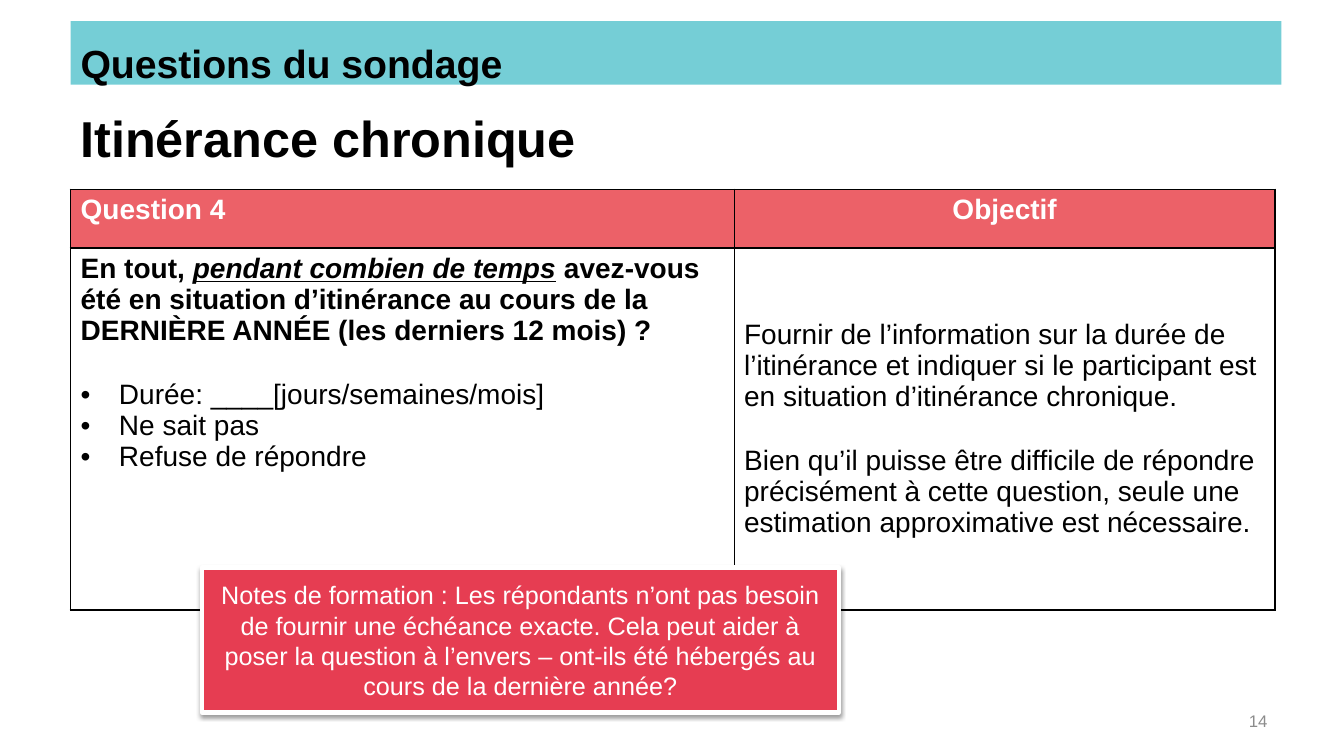
from dataclasses import dataclass, field

from lxml import etree
from pptx import Presentation
from pptx import util as u
from pptx.dml.color import RGBColor
from pptx.enum import shapes, text
from pptx.oxml import ns

ALIGN = text.PP_ALIGN
ANCHOR = text.MSO_ANCHOR
BLACK, WHITE, CORAL = "000000", "FFFFFF", "EC6168"


@dataclass
class Run:
    words: str
    marked: bool = False


@dataclass
class Para:
    runs: list[Run]
    size: float = 20
    color: str = BLACK
    bold: bool = False
    align: ALIGN = ALIGN.LEFT
    before: float = 0
    line: float = 0
    bullet: bool = False


@dataclass
class Box:
    left: float
    top: float
    width: float
    height: float
    para: Para
    anchor: ANCHOR = ANCHOR.MIDDLE
    fill: str = ""
    edge: str = ""


@dataclass
class Cell:
    paras: list[Para]
    fill: str = ""
    anchor: ANCHOR = ANCHOR.TOP


@dataclass
class Grid:
    left: float
    top: float
    cols: list[float]
    rows: list[float]
    cells: list[list[Cell]] = field(default_factory=list)


def rgb(code: str) -> RGBColor:
    return RGBColor.from_string(code)


def add_tag(parent, name: str, **attrs):
    return etree.SubElement(parent, ns.qn(name), {k: str(v) for k, v in attrs.items()})


def write(frame, paras: list[Para]) -> None:
    frame.word_wrap = True
    for i, item in enumerate(paras):
        para = frame.paragraphs[0] if i == 0 else frame.add_paragraph()
        para.alignment = item.align
        if item.before:
            para.space_before = u.Pt(item.before)
        if item.line:
            para.line_spacing = u.Pt(item.line)
        if item.bullet:
            props = para._p.get_or_add_pPr()
            props.set("marL", str(u.Inches(0.38)))
            props.set("indent", str(u.Inches(-0.38)))
            add_tag(props, "a:buFont", typeface="Arial")
            add_tag(props, "a:buChar", char="•")
        font = para.font
        font.name, font.size, font.bold = "Arial", u.Pt(item.size), item.bold
        font.color.rgb = rgb(item.color)
        for part in item.runs:
            run = para.add_run()
            run.text = part.words
            if part.marked:
                run.font.italic = run.font.underline = True


def draw_box(slide, box: Box):
    area = [u.Inches(n) for n in (box.left, box.top, box.width, box.height)]
    if box.fill:
        shape = slide.shapes.add_shape(shapes.MSO_SHAPE.RECTANGLE, *area)
        shape.shadow.inherit = False
        shape.fill.solid()
        shape.fill.fore_color.rgb = rgb(box.fill)
        if box.edge:
            shape.line.color.rgb = rgb(box.edge)
            shape.line.width = u.Pt(3)
        else:
            shape.line.fill.background()
    else:
        shape = slide.shapes.add_textbox(*area)
    write(shape.text_frame, [box.para])
    shape.text_frame.vertical_anchor = box.anchor
    return shape


def cast_shade(shape) -> None:
    effects = shape._element.spPr.find(ns.qn("a:effectLst"))
    shade = add_tag(effects, "a:outerShdw", blurRad=u.Pt(3.1), dist=u.Pt(1.6),
                    dir=90 * 60000, rotWithShape=0)
    color = add_tag(shade, "a:srgbClr", val=BLACK)
    add_tag(color, "a:alpha", val=38000)


def rule_cell(cell, widths: dict[str, float]) -> None:
    props = cell._tc.get_or_add_tcPr()
    for side, width in widths.items():
        line = add_tag(props, f"a:ln{side}", w=u.Pt(width))
        add_tag(add_tag(line, "a:solidFill"), "a:srgbClr", val=BLACK)


def draw_grid(slide, grid: Grid) -> None:
    table = slide.shapes.add_table(
        len(grid.rows), len(grid.cols), u.Inches(grid.left), u.Inches(grid.top),
        u.Inches(sum(grid.cols)), u.Inches(sum(grid.rows))).table
    for col, width in zip(table.columns, grid.cols):
        col.width = u.Inches(width)
    for row, height in zip(table.rows, grid.rows):
        row.height = u.Inches(height)
    last = len(grid.cols) - 1
    for r, row in enumerate(grid.cells):
        for c, item in enumerate(row):
            cell = table.cell(r, c)
            rule_cell(cell, {"L": 0.5 if c else 1.5, "R": 1.5 if c == last else 0.5,
                             "T": 1.5, "B": 1.5})
            if item.fill:
                cell.fill.solid()
                cell.fill.fore_color.rgb = rgb(item.fill)
            else:
                cell.fill.background()
            cell.vertical_anchor = item.anchor
            write(cell.text_frame, item.paras)


# Content
TITLE = Box(0.7, 0.98, 9.27, 0.77, Para([Run("Itinérance chronique")], 36, bold=True))
BANNER = Box(0.7, 0.21, 12.01, 0.63,
             Para([Run("Questions du sondage")], 28, bold=True, line=43.2),
             ANCHOR.TOP, "75CED6")
NOTE = Box(2, 5.63, 6.32, 1.44, Para([Run(
    "Notes de formation : Les répondants n’ont pas besoin de fournir une échéance "
    "exacte. Cela peut aider à poser la question à l’envers – ont-ils été hébergés "
    "au cours de la dernière année?")], 18, WHITE, align=ALIGN.CENTER),
    fill="E63D52", edge=WHITE)
NUMBER = Box(9.56, 6.95, 3.11, 0.4, Para([Run("14")], 12, "8C8C8C", align=ALIGN.RIGHT))

GAP = 23  # one line of 20 pt text
ASK = Para([
    Run("En tout, "),
    Run("pendant combien de temps", marked=True),
    Run(" avez-vous été en situation d’itinérance au cours de la DERNIÈRE ANNÉE "
        "(les derniers 12 mois) ?"),
], bold=True)
REPLIES = [Para([Run(words)], bullet=True, before=0 if i else GAP) for i, words in enumerate(
    ["Durée: ____[jours/semaines/mois]", "Ne sait pas", "Refuse de répondre"])]
GOALS = [
    Para([Run("Fournir de l’information sur la durée de l’itinérance et indiquer si le "
              "participant est en situation d’itinérance chronique.")]),
    Para([Run("Bien qu’il puisse être difficile de répondre précisément à cette question, "
              "seule une estimation approximative est nécessaire.")], before=GAP),
]
HEADS = [Cell([Para([Run(words)], color=WHITE, bold=True, align=align)], CORAL)
         for words, align in [("Question 4", ALIGN.LEFT), ("Objectif", ALIGN.CENTER)]]
GRID = Grid(0.7, 1.88, [6.58, 5.37], [0.58, 3.59],
            [HEADS, [Cell([ASK, *REPLIES]), Cell(GOALS, anchor=ANCHOR.MIDDLE)]])


def main() -> None:
    deck = Presentation()
    deck.slide_width, deck.slide_height = u.Inches(13.33), u.Inches(7.5)
    slide = deck.slides.add_slide(deck.slide_layouts[6])
    # Headings
    draw_box(slide, TITLE)
    draw_box(slide, BANNER)
    # Question table
    draw_grid(slide, GRID)
    # Training note and page number
    cast_shade(draw_box(slide, NOTE))
    draw_box(slide, NUMBER)
    deck.save("out.pptx")


if __name__ == "__main__":
    main()
